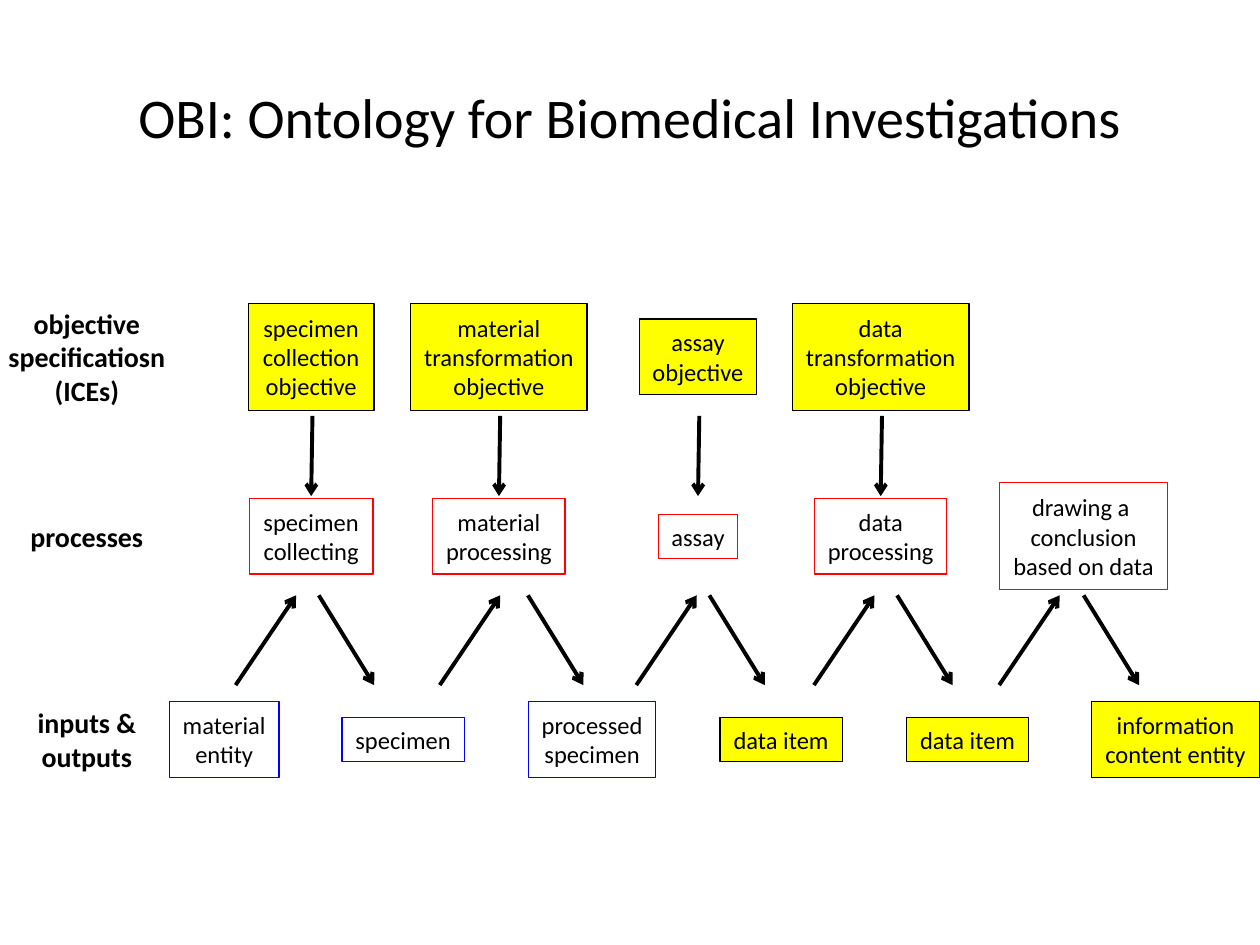
from collections import namedtuple

from lxml.etree import SubElement
from pptx import Presentation
from pptx.dml.color import RGBColor
from pptx.enum.shapes import MSO_CONNECTOR, MSO_SHAPE
from pptx.enum.text import MSO_ANCHOR, PP_ALIGN
from pptx.oxml.ns import qn
from pptx.util import Inches, Pt

BLACK = RGBColor(0, 0, 0)
RED = RGBColor(0xFF, 0, 0)
BLUE = RGBColor(0, 0, 0xFF)
YELLOW = RGBColor(0xFF, 0xFF, 0)
FONT = "Calibri"
WIDTH, HEIGHT = 10, 7.5

Box = namedtuple("Box", "left top width height")
# Each node: text, centre as a share of the row width, width in inches
OBJECTIVES = [
    ("specimen\ncollection\nobjective", 0.247, 1.0),
    ("material\ntransformation\nobjective", 0.396, 1.4),
    ("assay\nobjective", 0.554, 0.93),
    ("data\ntransformation\nobjective", 0.699, 1.4),
]
PROCESSES = [
    ("specimen\ncollecting", 0.247, 0.98),
    ("material\nprocessing", 0.396, 1.05),
    ("assay", 0.554, 0.63),
    ("data\nprocessing", 0.699, 1.05),
    ("drawing a \nconclusion\nbased on data", 0.86, 1.33),
]
MATERIALS = [
    ("material\nentity", 0.178, 0.87),
    ("specimen", 0.32, 0.97),
    ("processed\nspecimen", 0.47, 1.01),
]
DATA = [
    ("data item", 0.62, 0.97),
    ("data item", 0.768, 0.97),
    ("information\ncontent entity", 0.933, 1.33),
]
INPUT_TIPS = [0.235, 0.397, 0.553, 0.694, 0.841]
OUTPUT_TAILS = [0.253, 0.419, 0.563, 0.712, 0.86]


def format_text(tf, text, size, bold=False):
    tf.text = text
    tf.vertical_anchor = MSO_ANCHOR.MIDDLE
    for p in tf.paragraphs:
        p.alignment = PP_ALIGN.CENTER
        for r in p.runs:
            r.font.name, r.font.size, r.font.bold = FONT, Pt(size), bold
            r.font.color.rgb = BLACK


def add_title(s, box, text):
    title = s.shapes.title
    title.left, title.top, title.width, title.height = map(Inches, box)
    format_text(title.text_frame, text, 32)


def add_label(s, row, text):
    """Put a bold heading in the first columns of a row."""
    sp = s.shapes.add_textbox(Inches(row.left - 0.04), Inches(row.top),
                              Inches(row.width * 0.146), Inches(row.height))
    sp.text_frame.word_wrap = False
    format_text(sp.text_frame, text, 16, bold=True)


def add_nodes(s, row, nodes, line, fill=None):
    """Centre framed nodes in a row, as high as their lines of text need."""
    for text, centre, width in nodes:
        height = 0.1 + 0.25 * len(text.split("\n"))
        left = row.left + row.width * centre - width / 2
        top = row.top + (row.height - height) / 2
        sp = s.shapes.add_shape(MSO_SHAPE.RECTANGLE, Inches(left), Inches(top),
                                Inches(width), Inches(height))
        sp.shadow.inherit = False
        sp.line.color.rgb, sp.line.width = line, Pt(0.75)
        if fill is None:
            sp.fill.background()
        else:
            sp.fill.solid()
            sp.fill.fore_color.rgb = fill
        sp.text_frame.word_wrap = False
        format_text(sp.text_frame, text, 14)


def add_arrows(s, band, tails, run, up=False):
    """Draw arrows across a band; run is their shift as a share of its width."""
    start, end = band.top, band.top + band.height
    if up:
        start, end = end, start
    for tail in tails:
        x = band.left + band.width * tail
        c = s.shapes.add_connector(MSO_CONNECTOR.STRAIGHT, Inches(x), Inches(start),
                                   Inches(x + band.width * run), Inches(end))
        c.line.color.rgb, c.line.width = BLACK, Pt(2.25)
        SubElement(c.line._get_or_add_ln(), qn("a:tailEnd"), type="arrow")
        SubElement(c._element.spPr, qn("a:effectLst"))


def add_diagram(s, box):
    def band(top, height):
        return Box(box.left, box.top + box.height * top, box.width, box.height * height)

    objectives, processes, items = band(0, 0.23), band(0.38, 0.23), band(0.81, 0.23)
    for row, text in ((objectives, "objective\nspecificatiosn\n(ICEs)"),
                      (processes, "processes"), (items, "inputs &\noutputs")):
        add_label(s, row, text)
    add_nodes(s, objectives, OBJECTIVES, BLACK, YELLOW)
    add_nodes(s, processes, PROCESSES, RED)
    add_nodes(s, items, MATERIALS, BLUE)
    add_nodes(s, items, DATA, BLACK, YELLOW)

    add_arrows(s, band(0.24, 0.17), [x + 0.001 for _, x, _ in OBJECTIVES], -0.001)
    links, run = band(0.62, 0.19), 0.048
    add_arrows(s, links, [tip - run for tip in INPUT_TIPS], run, up=True)
    add_arrows(s, links, OUTPUT_TAILS, 0.044)


def main():
    prs = Presentation()
    prs.slide_width, prs.slide_height = Inches(WIDTH), Inches(HEIGHT)
    s = prs.slides.add_slide(prs.slide_layouts[5])
    add_title(s, Box(0, HEIGHT * 0.04, WIDTH, HEIGHT / 6),
              "OBI: Ontology for Biomedical Investigations")
    add_diagram(s, Box(0, HEIGHT * 0.32, WIDTH, HEIGHT * 0.5))
    prs.save("out.pptx")


if __name__ == "__main__":
    main()
